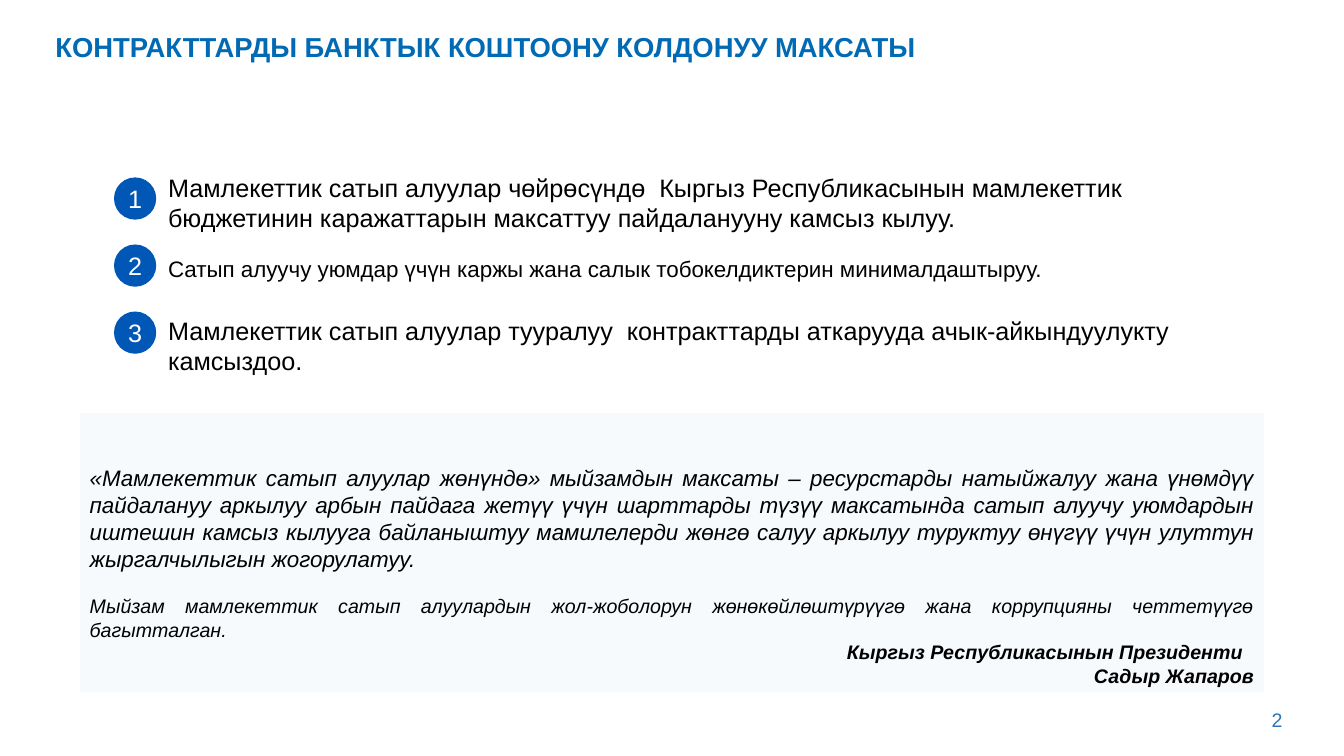
from dataclasses import dataclass

from lxml.etree import SubElement
from pptx import Presentation
from pptx.dml.color import RGBColor
from pptx.enum.shapes import MSO_SHAPE as Shape
from pptx.enum.text import MSO_ANCHOR as Anchor, MSO_AUTO_SIZE as AutoSize, PP_ALIGN as Align
from pptx.oxml.ns import qn
from pptx.shapes.autoshape import Shape as Box
from pptx.slide import Slide
from pptx.util import Pt


@dataclass(frozen=True)
class Theme:
    font: str = "Arial"
    title: str = "006AB4"
    badge: str = "0057B5"
    panel: str = "DEEBF7"
    panel_alpha: int = 23000
    page_number: str = "2E75B6"
    ink: str = "000000"
    paper: str = "FFFFFF"
    title_size: float = 19.6
    large: float = 18
    medium: float = 16
    small: float = 14


@dataclass(frozen=True)
class Area:
    left: float
    top: float
    width: float
    height: float

    def lengths(self) -> list[Pt]:
        return [Pt(value) for value in (self.left, self.top, self.width, self.height)]


@dataclass(frozen=True)
class Line:
    text: str
    size: float
    color: str
    align: Align = Align.LEFT
    bold: bool = False
    italic: bool = False
    before: float = 0
    spacing: float = 1.0


@dataclass(frozen=True)
class Goal:
    text: str
    size: float
    top: float
    width: float
    height: float


THEME = Theme()
BADGE_LEFT, BADGE_TOP, BADGE_STEP, BADGE_SIZE = 81.4, 126.7, 47.9, 30.2
GOAL_LEFT = 113

GOALS = [
    Goal("Мамлекеттик сатып алуулар чөйрөсүндө  Кыргыз Республикасынын мамлекеттик "
         "бюджетинин каражаттарын максаттуу пайдаланууну камсыз кылуу.",
         THEME.large, 119.5, 777.6, 51),
    Goal("Сатып алуучу уюмдар үчүн каржы жана салык тобокелдиктерин минималдаштыруу.",
         THEME.medium, 178.5, 703.4, 46),
    Goal("Мамлекеттик сатып алуулар тууралуу  контракттарды аткарууда "
         "ачык-айкындуулукту камсыздоо.",
         THEME.large, 221.8, 777.6, 51),
]

QUOTE = [
    Line("«Мамлекеттик сатып алуулар жөнүндө» мыйзамдын максаты – ресурстарды натыйжалуу "
         "жана үнөмдүү пайдалануу аркылуу арбын пайдага жетүү үчүн шарттарды түзүү "
         "максатында сатып алуучу уюмдардын иштешин камсыз кылууга байланыштуу "
         "мамилелерди жөнгө салуу аркылуу туруктуу өнүгүү үчүн улуттун "
         "жыргалчылыгын жогорулатуу.",
         THEME.medium, THEME.ink, Align.JUSTIFY, italic=True),
    Line("Мыйзам мамлекеттик сатып алуулардын жол-жоболорун жөнөкөйлөштүрүүгө жана "
         "коррупцияны четтетүүгө багытталган.",
         THEME.small, THEME.ink, Align.JUSTIFY, italic=True, before=16),
]

SIGNATURE = [
    Line(text, THEME.small, THEME.ink, Align.RIGHT, bold=True, italic=True)
    for text in ("Кыргыз Республикасынын Президенти  ", "Садыр Жапаров")
]


def assign(target: object, values: dict) -> None:
    for name, value in values.items():
        setattr(target, name, value)


def write(box: Box, lines: list[Line], anchor: Anchor = Anchor.TOP, inset: bool = True) -> None:
    frame = box.text_frame
    side, edge = (7.2, 3.6) if inset else (0, 0)
    assign(frame, {
        "word_wrap": True, "auto_size": AutoSize.NONE, "vertical_anchor": anchor,
        "margin_left": Pt(side), "margin_right": Pt(side),
        "margin_top": Pt(edge), "margin_bottom": Pt(edge),
    })
    for index, line in enumerate(lines):
        para = frame.add_paragraph() if index else frame.paragraphs[0]
        assign(para, {"alignment": line.align, "line_spacing": line.spacing,
                      "space_before": Pt(line.before)})
        span = para.add_run()
        span.text = line.text
        assign(span.font, {"name": THEME.font, "size": Pt(line.size),
                           "bold": line.bold, "italic": line.italic})
        span.font.color.rgb = RGBColor.from_string(line.color)


def add_text(page: Slide, area: Area, lines: list[Line], inset: bool = True) -> None:
    write(page.shapes.add_textbox(*area.lengths()), lines, inset=inset)


def add_filled(page: Slide, kind: Shape, area: Area, color: str) -> Box:
    box = page.shapes.add_shape(kind, *area.lengths())
    box.shadow.inherit = False
    box.fill.solid()
    box.fill.fore_color.rgb = RGBColor.from_string(color)
    box.line.fill.background()
    return box


def add_title(page: Slide) -> None:
    title = page.shapes.title
    area = Area(39.6, 23.8, 850.3, 21.6)
    assign(title, dict(zip(("left", "top", "width", "height"), area.lengths())))
    write(title, [Line("КОНТРАКТТАРДЫ БАНКТЫК КОШТООНУ КОЛДОНУУ МАКСАТЫ",
                       THEME.title_size, THEME.title, bold=True, spacing=0.9)], inset=False)


def add_quote(page: Slide) -> None:
    panel = add_filled(page, Shape.RECTANGLE, Area(57, 295.2, 846, 199.4), THEME.panel)
    color = panel.element.spPr.find(f"{qn('a:solidFill')}/{qn('a:srgbClr')}")
    SubElement(color, qn("a:alpha"), val=str(THEME.panel_alpha))
    write(panel, QUOTE, Anchor.MIDDLE)
    add_text(page, Area(273.6, 453.6, 629.3, 41), SIGNATURE)


def add_goal(page: Slide, index: int, goal: Goal) -> None:
    add_text(page, Area(GOAL_LEFT, goal.top, goal.width, goal.height),
             [Line(goal.text, goal.size, THEME.ink)])
    area = Area(BADGE_LEFT, BADGE_TOP + index * BADGE_STEP, BADGE_SIZE, BADGE_SIZE)
    badge = add_filled(page, Shape.OVAL, area, THEME.badge)
    write(badge, [Line(str(index + 1), THEME.large, THEME.paper, Align.CENTER)],
          Anchor.MIDDLE, inset=False)


def main() -> None:
    deck = Presentation()
    assign(deck, {"slide_width": Pt(960), "slide_height": Pt(540)})
    page = deck.slides.add_slide(deck.slide_layouts.get_by_name("Title Only"))
    add_title(page)
    add_quote(page)
    for index, goal in enumerate(GOALS):
        add_goal(page, index, goal)
    add_text(page, Area(890.6, 505.4, 43.2, 34.6),
             [Line("2", THEME.small, THEME.page_number, Align.CENTER)], inset=False)
    deck.save("out.pptx")


if __name__ == "__main__":
    main()
